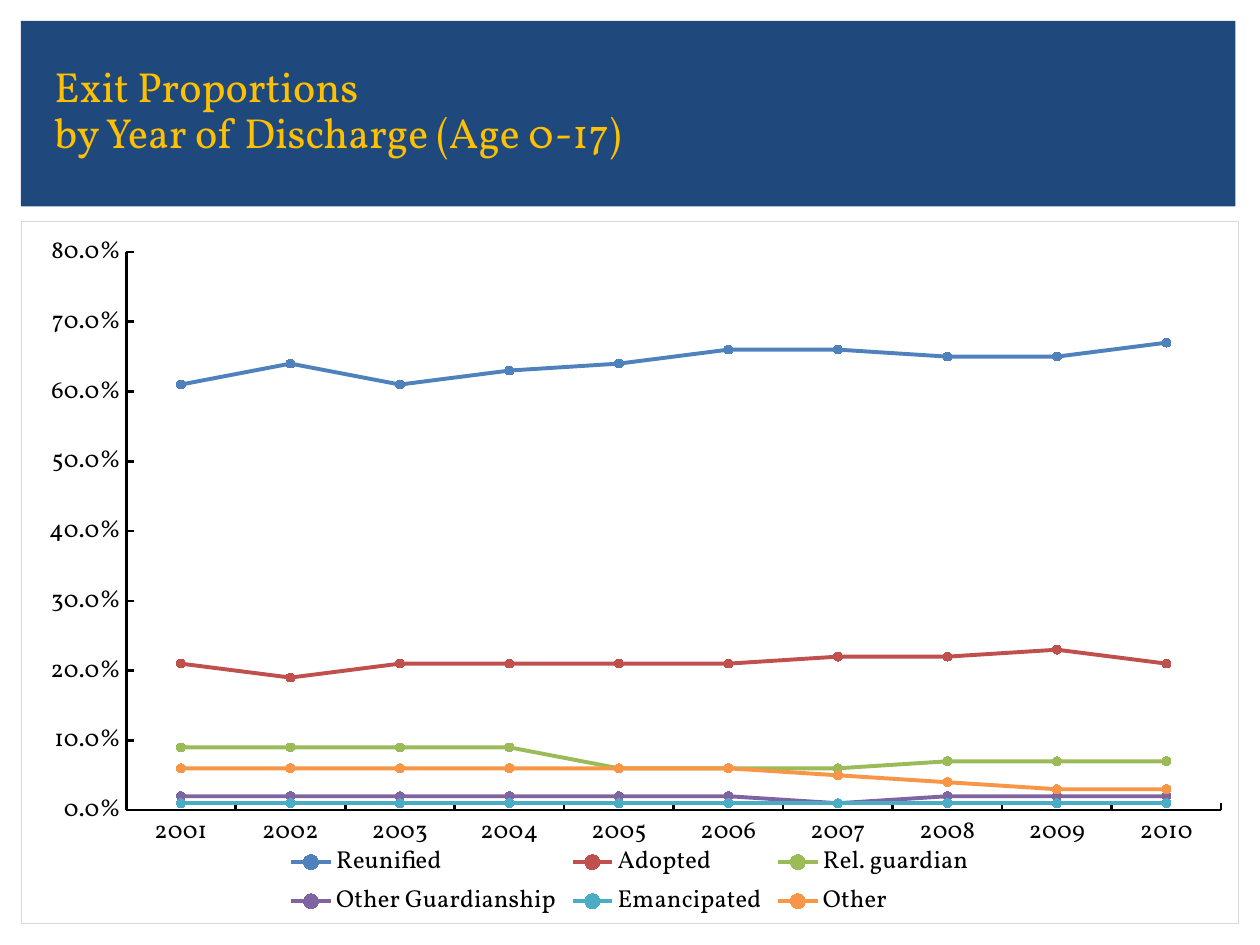
from lxml import etree
from pptx import Presentation
from pptx.chart.data import CategoryChartData
from pptx.dml.color import RGBColor
from pptx.enum.chart import XL_CHART_TYPE as ChartType
from pptx.enum.chart import XL_LEGEND_POSITION as LegendPosition
from pptx.enum.chart import XL_MARKER_STYLE as MarkerStyle
from pptx.enum.chart import XL_TICK_MARK as TickMark
from pptx.enum.shapes import MSO_SHAPE as Shape
from pptx.enum.text import MSO_ANCHOR as Anchor
from pptx.oxml import parse_xml
from pptx.oxml.ns import qn
from pptx.util import Pt

FONT = "Vollkorn"
COLORS = {
    "band": "1F497D",
    "title": "FFC000",
    "text": "000000",
    "paper": "FFFFFF",
    "border": "D9D9D9",
    "Reunified": "4F81BD",
    "Adopted": "C0504D",
    "Rel. guardian": "9BBB59",
    "Other Guardianship": "8064A2",
    "Emancipated": "4BACC6",
    "Other": "F79646",
}
YEARS = [str(year) for year in range(2001, 2011)]
PERCENTAGES = {
    "Reunified": [61, 64, 61, 63, 64, 66, 66, 65, 65, 67],
    "Adopted": [21, 19, 21, 21, 21, 21, 22, 22, 23, 21],
    "Rel. guardian": [9, 9, 9, 9, 6, 6, 6, 7, 7, 7],
    "Other Guardianship": [2, 2, 2, 2, 2, 2, 1, 2, 2, 2],
    "Emancipated": [1] * len(YEARS),
    "Other": [6, 6, 6, 6, 6, 6, 5, 4, 3, 3],
}
PLOT_PERCENT = {"x": 8.6, "y": 4.4, "w": 90, "h": 79.5}
CHART_NS = "http://schemas.openxmlformats.org/drawingml/2006/chart"
DRAWING_NS = "http://schemas.openxmlformats.org/drawingml/2006/main"


def color(name):
    return RGBColor.from_string(COLORS[name])


def apply_format(target, values):
    for name, value in values.items():
        setattr(target, name, value)


def paint(fill, name):
    fill.solid()
    fill.fore_color.rgb = color(name)


def draw_line(line, name, width):
    paint(line.fill, name)
    line.width = Pt(width)


def add_band(page, left, top, width, height):
    band = page.shapes.add_shape(
        Shape.RECTANGLE, Pt(left), Pt(top), Pt(width), Pt(height))
    band.shadow.inherit = False
    paint(band.fill, "band")
    band.line.fill.background()


def add_title(page, lines, left, top, width, height):
    box = page.shapes.add_textbox(Pt(left), Pt(top), Pt(width), Pt(height))
    frame = box.text_frame
    apply_format(frame, {"word_wrap": True, "vertical_anchor": Anchor.TOP})
    for index, line in enumerate(lines):
        para = frame.add_paragraph() if index else frame.paragraphs[0]
        para.line_spacing = 0.9
        span = para.add_run()
        span.text = line
        apply_format(span.font, {"name": FONT, "size": Pt(24)})
        span.font.color.rgb = color("title")


def frame_chart(chart):
    chart.element.find(qn("c:chart")).addnext(parse_xml(
        f'<c:spPr xmlns:c="{CHART_NS}" xmlns:a="{DRAWING_NS}">'
        f'<a:solidFill><a:srgbClr val="{COLORS["paper"]}"/></a:solidFill>'
        f'<a:ln w="{Pt(0.75)}"><a:solidFill>'
        f'<a:srgbClr val="{COLORS["border"]}"/></a:solidFill></a:ln></c:spPr>'))


def place_plot(chart):
    area = chart.element.find(".//" + qn("c:plotArea"))
    for old in area.findall(qn("c:layout")):
        area.remove(old)
    layout = etree.Element(qn("c:layout"))
    manual = etree.SubElement(layout, qn("c:manualLayout"))
    settings = {"layoutTarget": "inner", "xMode": "edge", "yMode": "edge"}
    for name, percent in PLOT_PERCENT.items():
        settings[name] = round(percent / 100, 3)
    for name, value in settings.items():
        etree.SubElement(manual, qn("c:" + name), val=str(value))
    area.insert(0, layout)


def style_axis(axis):
    apply_format(axis, {
        "has_major_gridlines": False,
        "major_tick_mark": TickMark.INSIDE,
        "minor_tick_mark": TickMark.NONE,
    })
    draw_line(axis.format.line, "text", 1.5)


def style_series(series):
    series.smooth = False
    draw_line(series.format.line, series.name, 2.25)
    apply_format(series.marker, {"style": MarkerStyle.CIRCLE, "size": 5})
    paint(series.marker.format.fill, series.name)
    draw_line(series.marker.format.line, series.name, 0.75)


def add_exit_chart(page, left, top, width, height):
    data = CategoryChartData(number_format="0.0%")
    data.categories = YEARS
    for name, values in PERCENTAGES.items():
        data.add_series(name, [value / 100 for value in values])
    chart = page.shapes.add_chart(
        ChartType.LINE_MARKERS, Pt(left), Pt(top), Pt(width), Pt(height),
        data).chart
    apply_format(chart, {"has_title": False, "has_legend": True})
    apply_format(chart.font, {"name": FONT, "size": Pt(14)})
    chart.font.color.rgb = color("text")
    apply_format(chart.legend, {
        "position": LegendPosition.BOTTOM, "include_in_layout": False})
    for axis in (chart.category_axis, chart.value_axis):
        style_axis(axis)
    apply_format(chart.value_axis, {
        "minimum_scale": 0, "maximum_scale": 0.8, "major_unit": 0.1})
    apply_format(chart.value_axis.tick_labels, {
        "number_format": "0.0%", "number_format_is_linked": False})
    chart.plots[0].vary_by_categories = False
    for series in chart.plots[0].series:
        style_series(series)
    frame_chart(chart)
    place_plot(chart)


def main():
    deck = Presentation()
    apply_format(deck, {"slide_width": Pt(720), "slide_height": Pt(540)})
    page = deck.slides.add_slide(deck.slide_layouts[6])
    add_band(page, 12, 12, 694, 106)
    add_exit_chart(page, 12, 126, 696, 402)
    add_title(page, ["Exit Proportions", "by Year of Discharge (Age 0-17)"],
              24, 34.5, 495, 62.5)
    deck.save("out.pptx")


if __name__ == "__main__":
    main()
